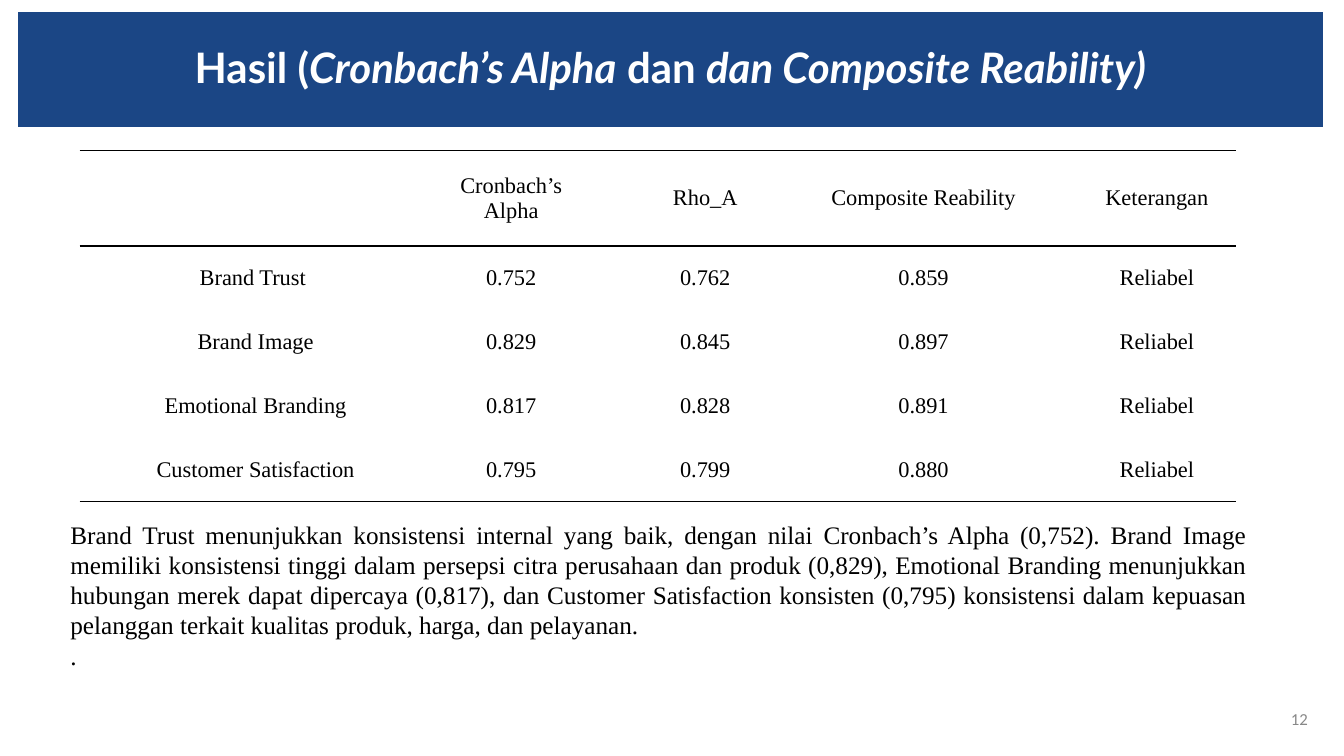
"""Build the reliability results slide with its table and summary."""
from dataclasses import dataclass

from lxml import etree
from pptx import Presentation
from pptx.dml.color import RGBColor
from pptx.enum.shapes import MSO_SHAPE
from pptx.enum.text import MSO_ANCHOR, PP_ALIGN
from pptx.oxml.ns import qn
from pptx.util import Inches, Pt

RECTANGLE = MSO_SHAPE.RECTANGLE
MIDDLE = MSO_ANCHOR.MIDDLE
CENTER, RIGHT, JUSTIFY = PP_ALIGN.CENTER, PP_ALIGN.RIGHT, PP_ALIGN.JUSTIFY
BLACK, WHITE, NAVY, GRAY = "000000", "FFFFFF", "1B4685", "888888"
SERIF = "Times New Roman"


@dataclass(frozen=True)
class Variable:
    name: str
    alpha: str
    rho: str
    composite: str
    verdict: str = "Reliabel"

    def cells(self) -> list[str]:
        return [self.name, self.alpha, self.rho, self.composite, self.verdict]


HEADINGS = ["", "Cronbach’s Alpha", "Rho_A", "Composite Reability", "Keterangan"]
VARIABLES = [
    Variable("Brand Trust ", "0.752", "0.762", "0.859"),
    Variable("Brand Image", "0.829", "0.845", "0.897"),
    Variable("Emotional Branding", "0.817", "0.828", "0.891"),
    Variable("Customer Satisfaction", "0.795", "0.799", "0.880"),
]
COLUMN_WIDTHS = [2.99, 2.08, 1.77, 2.56, 2.07]
HEADING_HEIGHT, VARIABLE_HEIGHT = 0.95, 0.635
TITLE_RUNS = [
    ("Hasil (", False),
    ("Cronbach’s Alpha", True),
    (" dan ", False),
    ("dan Composite Reability)", True),
]
SUMMARY = (
    "Brand Trust menunjukkan konsistensi internal yang baik, dengan nilai "
    "Cronbach’s Alpha (0,752). Brand Image memiliki konsistensi tinggi dalam "
    "persepsi citra perusahaan dan produk (0,829), Emotional Branding "
    "menunjukkan hubungan merek dapat dipercaya (0,817), dan Customer "
    "Satisfaction konsisten (0,795) konsistensi dalam kepuasan pelanggan "
    "terkait kualitas produk, harga, dan pelayanan.\n."
)


def rgb(color: str) -> RGBColor:
    return RGBColor.from_string(color)


def style(font, name: str, size: float, color: str) -> None:
    font.name, font.size = name, Pt(size)
    font.color.rgb = rgb(color)


def set_borders(cell, ruled: set[str]) -> None:
    properties = cell._tc.get_or_add_tcPr()
    for side in ("lnL", "lnR", "lnT", "lnB"):
        border = etree.SubElement(properties, qn(f"a:{side}"), w=str(Pt(1)))
        if side in ruled:
            fill = etree.SubElement(border, qn("a:solidFill"))
            etree.SubElement(fill, qn("a:srgbClr"), val=BLACK)
        else:
            etree.SubElement(border, qn("a:noFill"))


def fill_cell(cell, text: str, ruled: set[str]) -> None:
    set_borders(cell, ruled)
    cell.fill.background()
    cell.vertical_anchor = MIDDLE
    cell.margin_left = cell.margin_right = Inches(0.07)
    cell.margin_top = cell.margin_bottom = 0
    cell.text_frame.text = text
    paragraph = cell.text_frame.paragraphs[0]
    paragraph.alignment = CENTER
    properties = paragraph._p.get_or_add_pPr()
    properties.set("marL", str(Inches(0.5)))
    properties.set("indent", "0")
    style(paragraph.font, SERIF, 16, BLACK)
    for run in paragraph.runs:
        style(run.font, SERIF, 16, BLACK)


def add_title(slide) -> None:
    banner = slide.shapes.add_shape(
        RECTANGLE, Inches(0.18), Inches(0.12), Inches(12.94), Inches(1.14)
    )
    banner.shadow.inherit = False
    banner.fill.solid()
    banner.fill.fore_color.rgb = rgb(NAVY)
    banner.line.fill.background()
    banner.text_frame.word_wrap = True
    banner.text_frame.vertical_anchor = MIDDLE
    paragraph = banner.text_frame.paragraphs[0]
    paragraph.alignment, paragraph.line_spacing = CENTER, 0.9
    for text, italic in TITLE_RUNS:
        run = paragraph.add_run()
        run.text = text
        style(run.font, "Lato", 30, WHITE)
        run.font.bold, run.font.italic = True, italic


def add_results(slide) -> None:
    rows = [HEADINGS] + [variable.cells() for variable in VARIABLES]
    heights = [HEADING_HEIGHT] + [VARIABLE_HEIGHT] * len(VARIABLES)
    results = slide.shapes.add_table(
        len(rows), len(HEADINGS), Inches(0.79), Inches(1.49),
        Inches(sum(COLUMN_WIDTHS)), Inches(sum(heights)),
    ).table
    results.first_row = results.horz_banding = False
    for column, width in zip(results.columns, COLUMN_WIDTHS):
        column.width = Inches(width)
    rules = {0: {"lnT", "lnB"}, 1: {"lnT"}, len(rows) - 1: {"lnB"}}
    for index, (texts, height) in enumerate(zip(rows, heights)):
        results.rows[index].height = Inches(height)
        for position, text in enumerate(texts):
            fill_cell(results.cell(index, position), text, rules.get(index, set()))


def add_text(slide, text: str, left: float, top: float, width: float,
             height: float, alignment: PP_ALIGN, name: str, size: float,
             color: str):
    frame = slide.shapes.add_textbox(
        Inches(left), Inches(top), Inches(width), Inches(height)
    ).text_frame
    frame.word_wrap = True
    frame.text = text
    for paragraph in frame.paragraphs:
        paragraph.alignment = alignment
        for run in paragraph.runs:
            style(run.font, name, size, color)
    return frame


def main() -> None:
    presentation = Presentation()
    presentation.slide_width = Inches(13.33)
    presentation.slide_height = Inches(7.5)
    slide = presentation.slides.add_slide(presentation.slide_layouts[6])
    add_title(slide)
    add_results(slide)
    add_text(slide, SUMMARY, 0.6, 5.1, 11.87, 1.62, JUSTIFY, SERIF, 18, BLACK)
    page_number = add_text(
        slide, "12", 12.5, 6.93, 0.57, 0.4, RIGHT, "Calibri", 12, GRAY
    )
    page_number.vertical_anchor = MIDDLE
    presentation.save("out.pptx")


if __name__ == "__main__":
    main()
